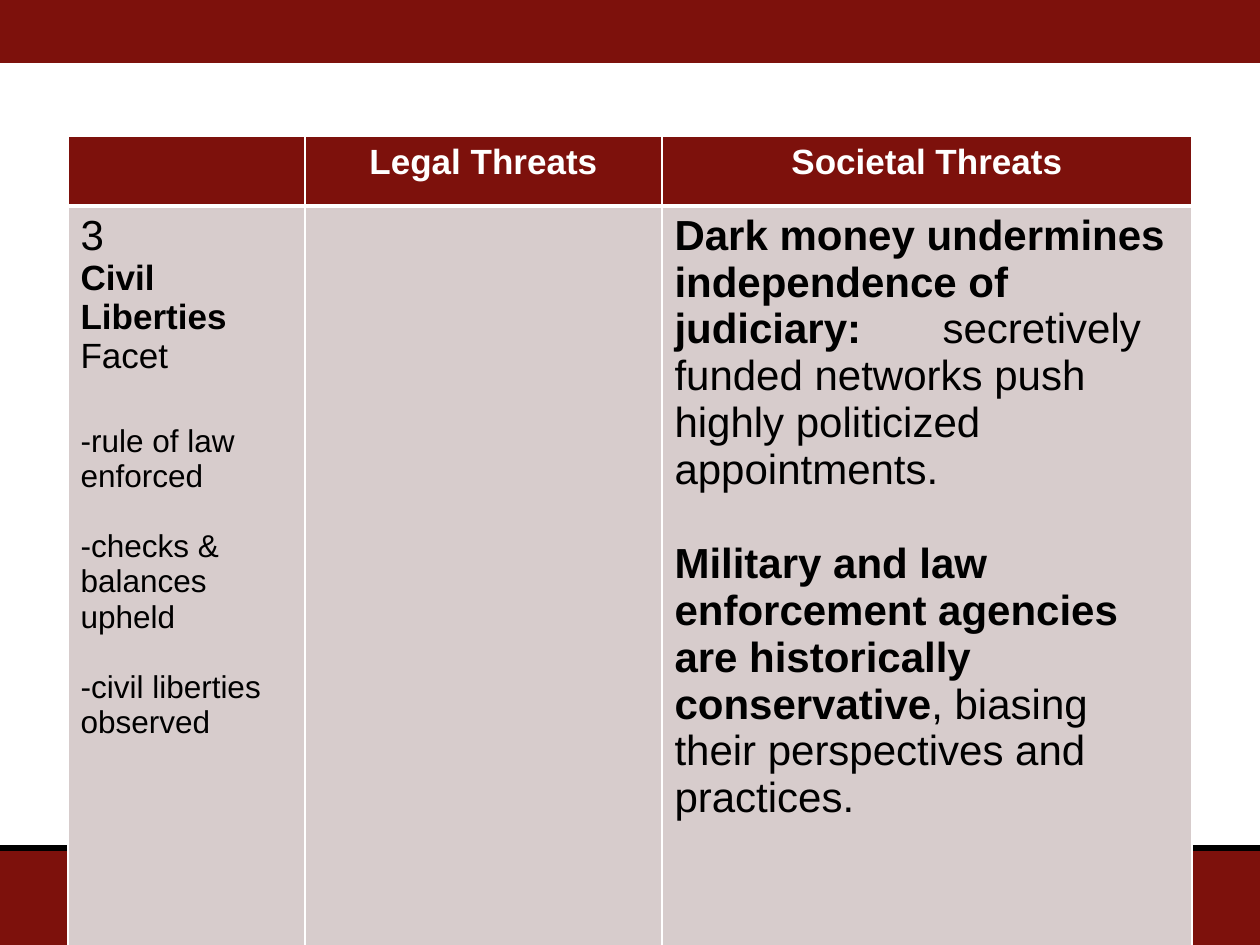
from lxml import etree
from pptx import Presentation
from pptx.dml.color import RGBColor
from pptx.enum import shapes, text
from pptx.oxml.ns import qn
from pptx.util import Pt

PX = 914400 // 126
W, H = 1260, 945
FONT = "Arial"
MAROON = RGBColor(0x7D, 0x11, 0x0C)
PALE = RGBColor(0xD7, 0xCC, 0xCC)
WHITE = RGBColor(0xFF, 0xFF, 0xFF)
BLACK = RGBColor(0, 0, 0)

# Content: each paragraph is (size, space before, [(text, bold), ...])
HEADERS = ["", "Legal Threats", "Societal Threats"]
FACET = [
    (24, 0, [("3", False)]),
    (20, 0, [("Civil Liberties", True), (" Facet", False)]),
    (18, 27, [("-rule of law enforced", False)]),
    (18, 20, [("-checks & balances upheld", False)]),
    (18, 20, [("-civil liberties observed", False)]),
]
SOCIETAL = [
    (24, 0, [("Dark money undermines independence of judiciary:\t", True),
             ("secretively funded networks push highly politicized appointments.", False)]),
    (24, 27, [("Military and law enforcement agencies are historically conservative", True),
              (", biasing their perspectives and practices.", False)]),
]
ROWS = [
    [[(20, 0, [(h, True)])] if h else [] for h in HEADERS],
    [FACET, [], SOCIETAL],
]
TABLE_LEFT, TABLE_TOP = 68, 136
COLS = [237, 357, 530]
ROW_HEIGHTS = [70, 740]
TAB_STOP = 268
BANDS = [(0, 63), (850, 95)]  # top, height
RULE_Y = 848


def px(n):
    return n * PX


def add_border(cell, side, width):
    ln = etree.SubElement(cell._tc.get_or_add_tcPr(), qn("a:ln" + side), w=str(Pt(width)))
    fill = etree.SubElement(ln, qn("a:solidFill"))
    etree.SubElement(fill, qn("a:srgbClr"), val=str(WHITE))


def add_tab_stop(p, pos):
    tabs = etree.SubElement(p._p.get_or_add_pPr(), qn("a:tabLst"))
    etree.SubElement(tabs, qn("a:tab"), pos=str(px(pos)), algn="l")


def write(tf, paragraphs, color, align):
    for i, (size, before, runs) in enumerate(paragraphs):
        p = tf.paragraphs[0] if i == 0 else tf.add_paragraph()
        p.alignment = align
        if before:
            p.space_before = Pt(before)
        if any("\t" in words for words, _ in runs):
            add_tab_stop(p, TAB_STOP)
        for words, bold in runs:
            r = p.add_run()
            r.text = words
            r.font.name, r.font.size, r.font.bold = FONT, Pt(size), bold
            r.font.color.rgb = color


prs = Presentation()
prs.slide_width, prs.slide_height = px(W), px(H)
slide = prs.slides.add_slide(prs.slide_layouts[6])

# Bands and the rule above the footer
for top, height in BANDS:
    sp = slide.shapes.add_shape(shapes.MSO_SHAPE.RECTANGLE, 0, px(top), px(W), px(height))
    sp.shadow.inherit = False
    sp.fill.solid()
    sp.fill.fore_color.rgb = MAROON
    sp.line.fill.background()
rule = slide.shapes.add_connector(shapes.MSO_CONNECTOR.STRAIGHT, 0, px(RULE_Y), px(W), px(RULE_Y))
rule.line.color.rgb = BLACK
rule.line.width = Pt(3.75)
etree.SubElement(rule._element.spPr, qn("a:effectLst"))

# Threats table
table = slide.shapes.add_table(
    len(ROWS), len(COLS), px(TABLE_LEFT), px(TABLE_TOP),
    px(sum(COLS)), px(sum(ROW_HEIGHTS))).table
for col, width in zip(table.columns, COLS):
    col.width = px(width)
for row, height in zip(table.rows, ROW_HEIGHTS):
    row.height = px(height)
for i, row in enumerate(ROWS):
    header = i == 0
    for j, paragraphs in enumerate(row):
        cell = table.cell(i, j)
        for side in "LRTB":
            divider = side == ("B" if header else "T")
            add_border(cell, side, 3 if divider else 1)
        cell.fill.solid()
        cell.fill.fore_color.rgb = MAROON if header else PALE
        write(cell.text_frame, paragraphs, WHITE if header else BLACK,
              text.PP_ALIGN.CENTER if header else text.PP_ALIGN.LEFT)

prs.save("out.pptx")
